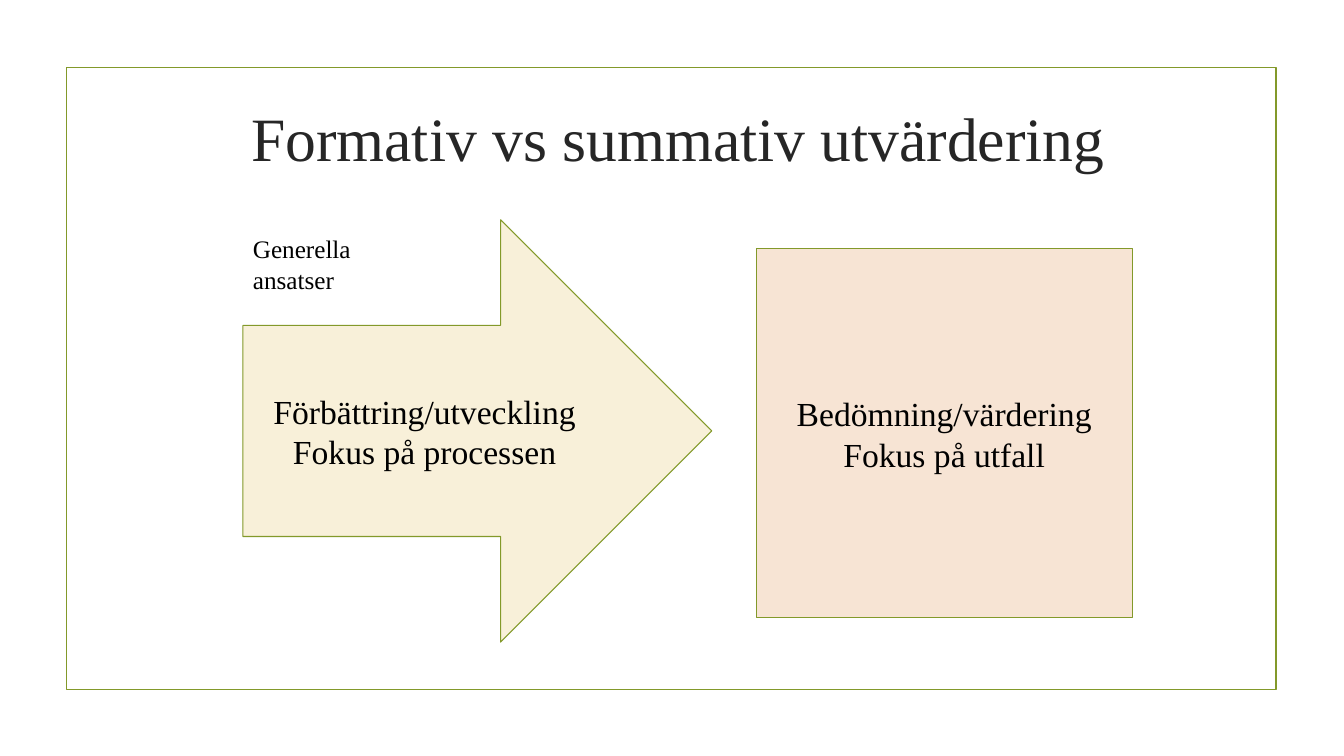
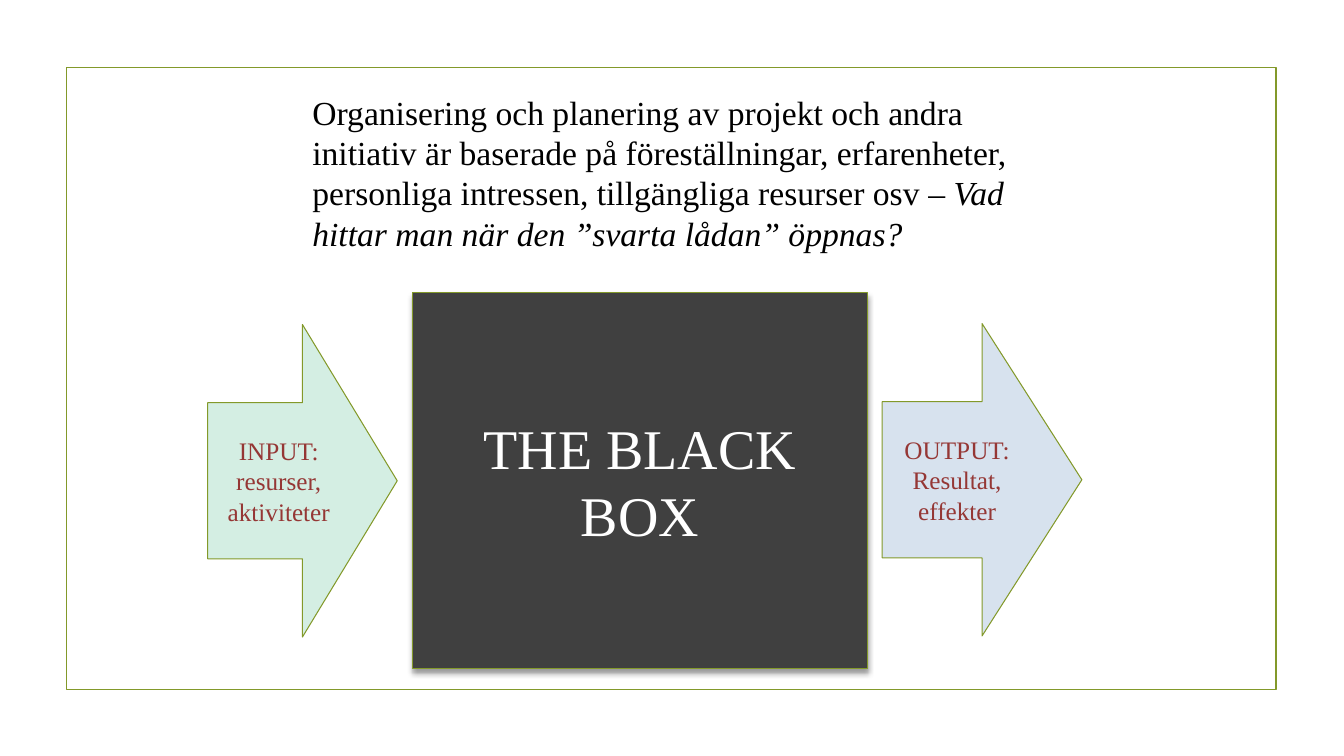
from lxml.etree import SubElement
from pptx import Presentation
from pptx.dml.color import RGBColor
from pptx.enum.shapes import MSO_SHAPE
from pptx.enum.text import MSO_ANCHOR, PP_ALIGN
from pptx.oxml.ns import qn
from pptx.util import Pt

PX = 9144  # EMU per px, 100 px to the inch
FONT = "Times New Roman"
COLORS = {
    "green": "83992A",
    "title": "262626",
    "black": "000000",
    "white": "FFFFFF",
    "wine": "953735",
    "peach": "F7E4D4",
    "cream": "F8F0D9",
    "charcoal": "404040",
    "mint": "D4EEE3",
    "sky": "D7E2EE",
}
TITLE_ONLY, BLANK = 5, 6


def px(*lengths):
    return [n * PX for n in lengths]


def rgb(name):
    return RGBColor.from_string(COLORS[name])


def format_font(font, size, color, **extra):
    for name, value in {"name": FONT, "size": Pt(size), **extra}.items():
        setattr(font, name, value)
    font.color.rgb = rgb(color)


def write(shape, paragraphs, size, color, align=PP_ALIGN.CENTER, anchor=MSO_ANCHOR.MIDDLE):
    """Fill a shape with paragraphs, each a list of (text, font extras) runs."""
    tf = shape.text_frame
    tf.word_wrap = True
    tf.vertical_anchor = anchor
    for i, runs in enumerate(paragraphs):
        p = tf.paragraphs[0] if i == 0 else tf.add_paragraph()
        p.alignment = align
        for text, extra in runs:
            r = p.add_run()
            r.text = text
            format_font(r.font, size, color, **extra)


def add_box(slide, kind, at, fill=None, line_width=0.75):
    sp = slide.shapes.add_shape(kind, *px(*at))
    sp.shadow.inherit = False
    if fill:
        sp.fill.solid()
        sp.fill.fore_color.rgb = rgb(fill)
    else:
        sp.fill.background()
    sp.line.color.rgb = rgb("green")
    sp.line.width = Pt(line_width)
    return sp


def add_label_box(slide, kind, at, fill, lines, size, color):
    sp = add_box(slide, kind, at, fill)
    write(sp, [[(line, {})] for line in lines], size, color)
    return sp


def add_drop_shadow(sp):
    effects = sp.element.spPr.find(qn("a:effectLst"))
    shadow = SubElement(effects, qn("a:outerShdw"), blurRad=str(Pt(4)),
                        dist=str(Pt(3)), dir="5400000", rotWithShape="0")
    clr = SubElement(shadow, qn("a:srgbClr"), val=COLORS["black"])
    SubElement(clr, qn("a:alpha"), val="40000")


def add_text(slide, at, runs, size):
    tb = slide.shapes.add_textbox(*px(*at))
    write(tb, [runs], size, "black", PP_ALIGN.LEFT, MSO_ANCHOR.TOP)


def add_framed_slide(prs, layout):
    slide = prs.slides.add_slide(prs.slide_layouts[layout])
    add_box(slide, MSO_SHAPE.RECTANGLE, (66, 67, 1200, 617), line_width=1.25)
    return slide


def set_title(slide, text, at):
    title = slide.shapes.title
    title.left, title.top, title.width, title.height = px(*at)
    write(title, [[(text, {})]], 44, "title")


def build_comparison(prs):
    s = add_framed_slide(prs, TITLE_ONLY)
    set_title(s, "Formativ vs summativ utvärdering", (223, 73, 900, 125))
    add_label_box(s, MSO_SHAPE.RECTANGLE, (750, 247, 373, 366), "peach",
                  ["Bedömning/värdering", "Fokus på utfall"], 24, "black")
    add_label_box(s, MSO_SHAPE.RIGHT_ARROW, (241, 218, 465, 419), "cream",
                  ["Förbättring/utveckling", "Fokus på processen"], 24, "black")
    add_text(s, (241, 227, 150, 71), [("Generella ansatser", {})], 18)


def build_black_box(prs):
    s = add_framed_slide(prs, BLANK)
    box = add_label_box(s, MSO_SHAPE.RECTANGLE, (409, 290, 451, 373), "charcoal",
                        ["THE BLACK BOX"], 40, "white")
    add_drop_shadow(box)
    add_label_box(s, MSO_SHAPE.RIGHT_ARROW, (206, 322, 188, 310), "mint",
                  ["INPUT:", "resurser, aktiviteter"], 18, "wine")
    add_label_box(s, MSO_SHAPE.RIGHT_ARROW, (875, 321, 198, 310), "sky",
                  ["OUTPUT:", "Resultat, effekter"], 18, "wine")
    add_text(s, (300, 86, 723, 172), [
        ("Organisering och planering av projekt och andra initiativ är baserade "
         "på föreställningar, erfarenheter, personliga intressen, tillgängliga "
         "resurser osv ", {}),
        ("– Vad hittar man när den ”svarta lådan” öppnas?", {"italic": True}),
    ], 24)


def main():
    prs = Presentation()
    prs.slide_width, prs.slide_height = px(1333, 750)
    build_comparison(prs)
    build_black_box(prs)
    prs.save("out.pptx")


if __name__ == "__main__":
    main()
